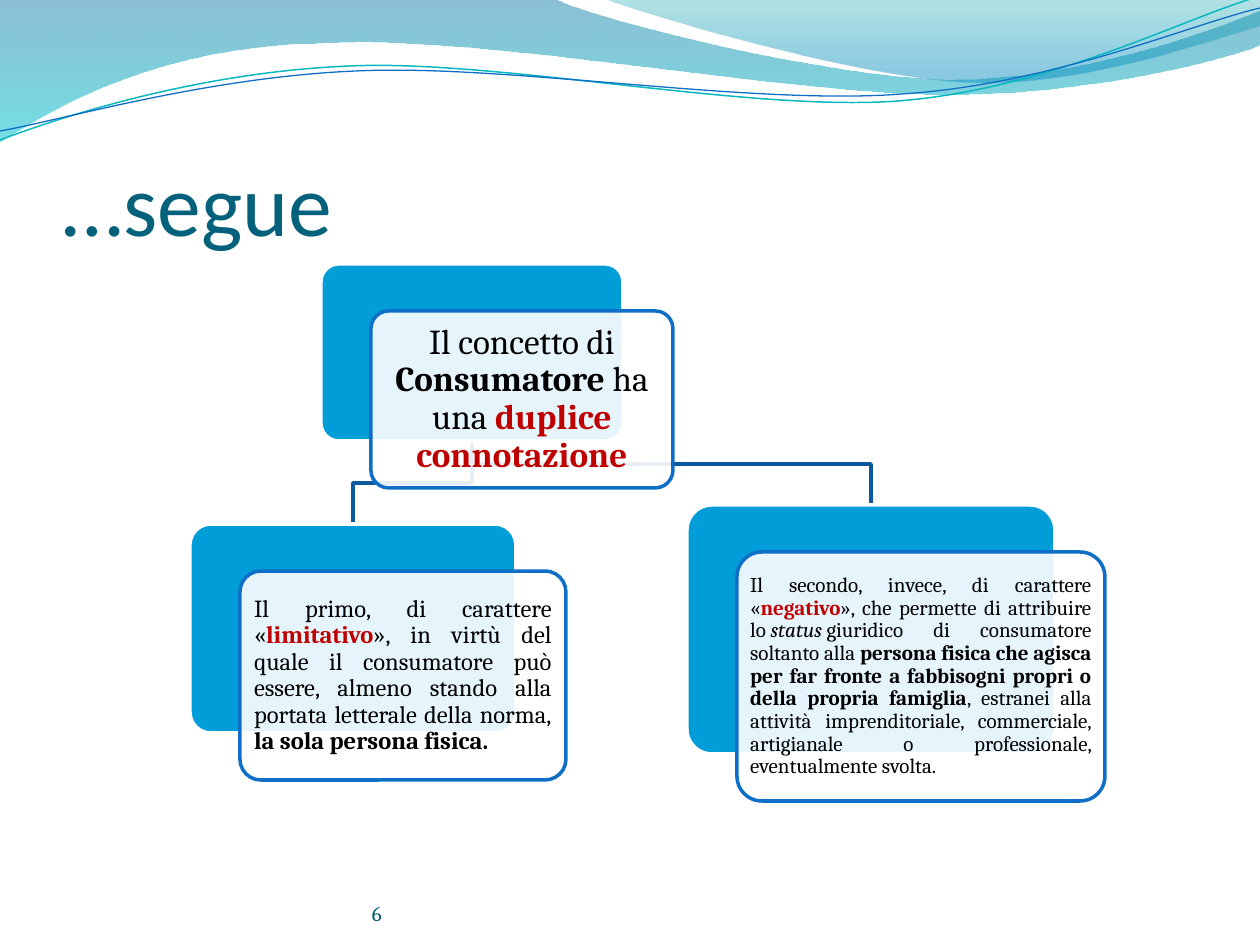
"""Build the slide on the double meaning of the consumer concept."""
import pptx
import pptx.dml.color
import pptx.enum.shapes
import pptx.enum.text
import pptx.oxml.ns
import pptx.util
from lxml import etree

PX = 914400 / 126
HUES = {
    "title": "04617B", "page": "045D75", "text": "000000", "red": "C00000",
    "card": "009DD9", "white": "FFFFFF", "edge": "0F6FC6", "link": "0C599F",
    "teal": "0AB8BF", "deep": "0074A1", "aqua": "00C6CF", "sea": "00A1A9",
    "sky": "008BBF",
}
RGB = {k: pptx.dml.color.RGBColor.from_string(v) for k, v in HUES.items()}
ALIGN = pptx.enum.text.PP_ALIGN
ANCHOR = pptx.enum.text.MSO_ANCHOR
NBSP = chr(160)
qn = pptx.oxml.ns.qn

deck = pptx.Presentation()
deck.slide_width = round(1260 * PX)
deck.slide_height = round(945 * PX)
shapes = deck.slides.add_slide(deck.slide_layouts[6]).shapes


def put(shape, runs, size=12, font="Cambria", hue="text", align=ALIGN.LEFT,
        anchor=ANCHOR.BOTTOM, pads=(0, 0, 0, 0), gap=1.0):
    frame = shape.text_frame
    frame.word_wrap = True
    frame.vertical_anchor = anchor
    (frame.margin_left, frame.margin_top, frame.margin_right,
     frame.margin_bottom) = [round(p * PX) for p in pads]
    para = frame.paragraphs[0]
    para.alignment = align
    para.line_spacing = gap
    for words, style in runs:
        run = para.add_run()
        run.text = words
        run.font.size = pptx.util.Pt(size)
        run.font.name = font
        run.font.bold = "b" in style
        run.font.italic = "i" in style
        run.font.color.rgb = RGB["red" if "r" in style else hue]


def trace(start, steps, close=False):
    dots = [step[i:i + 2] for step in steps for i in range(0, len(step), 2)]
    pen = shapes.build_freeform(*start, scale=PX)
    pen.add_line_segments(dots, close=close)
    shape = pen.convert_to_shape()
    shape.shadow.inherit = False
    legs = iter(list(shape.element.spPr.iter(qn("a:lnTo"))))
    for step in steps:
        leg = next(legs)
        if len(step) == 6:
            curve = etree.Element(qn("a:cubicBezTo"))
            leg.addprevious(curve)
            for part in (leg, next(legs), next(legs)):
                curve.append(part[0])
                part.getparent().remove(part)
    return shape


waves = [
    ((0, 0), [(554, -1), (600, 21, 837, 79, 955, 79), (1075, 79, 1207, 33, 1260, 11),
              (1261, 45), (1239, 55, 1096, 96, 940, 94), (784, 94, 481, 35, 324, 43),
              (163, 45, 58, 105, -1, 142), (0, 0)],
     [("deep", 0, 45), ("aqua", 1, 55)]),
    ((604, -1), [(641, 14, 859, 78, 969, 82), (1079, 87, 1211, 40, 1260, 26),
                 (1260, 0), (604, -1)],
     [("sea", 0, 30), ("sky", 0.8, 45)]),
]
for start, steps, stops in waves:
    wave = trace(start, steps, close=True)
    wave.line.fill.background()
    wave.fill.gradient()
    wave.fill.gradient_angle = 270
    for stop, (hue, place, _) in zip(wave.fill.gradient_stops, stops):
        stop.color.rgb = RGB[hue]
        stop.position = place
    tints = wave.element.spPr.iter(qn("a:srgbClr"))
    for tint, (_, _, alpha) in zip(tints, stops):
        etree.SubElement(tint, qn("a:alpha"), val=str(alpha * 1000))

cards = [
    (321, 264, 302, 177, 20, 10, ALIGN.CENTER, [
        ("Il concetto di ", ""), ("Consumatore", "b"), (" ha una ", ""),
        ("duplice connotazione", "br")]),
    (190, 524, 326, 209, 14, 8, ALIGN.JUSTIFY, [
        ("Il primo, di carattere «", ""), ("limitativo", "br"),
        ("», in virtù del quale il consumatore può essere, almeno stando alla "
         "portata letterale della norma,", ""),
        (" la sola persona fisica.", "b")]),
    (687, 505, 368, 249, 12, 6, ALIGN.JUSTIFY, [
        ("Il secondo, invece, di carattere «", ""), ("negativo", "br"),
        ("», che permette di attribuire lo" + NBSP, ""), ("status", "i"),
        (NBSP + "giuridico di consumatore soltanto alla ", ""),
        ("persona fisica che agisca per far fronte a fabbisogni propri o "
         "della propria famiglia", "b"),
        (", estranei alla attività imprenditoriale, commerciale, artigianale o "
         "professionale, eventualmente svolta.", "")]),
]
lines = [
    ((0, 140), [(60, 117, 199, 72, 349, 66), (497, 59, 747, 112, 898, 101),
                (1050, 89, 1182, 19, 1257, -3)], "teal", 0.85),
    ((0, 131), [(59, 121, 207, 77, 357, 71), (508, 64, 752, 106, 903, 94),
                (1053, 84, 1186, 26, 1260, 8)], "edge", 0.75),
]
left, top, wide, high = cards[0][:4]
root = (left + wide // 2, top + high)
for left, top, wide, *_ in cards[:0:-1]:
    mid, bend = left + wide // 2, top - 41
    lines.append((root, [(root[0], bend), (mid, bend), (mid, top)], "link", 2))
for start, steps, hue, width in lines:
    line = trace(start, steps)
    line.fill.background()
    line.line.color.rgb = RGB[hue]
    line.line.width = pptx.util.Pt(width)

title = shapes.add_textbox(*[round(v * PX) for v in (63, 97, 1134, 157)])
put(title, [("…segue", "")], size=50, font="Calibri", hue="title", pads=(0, 6, 0, 0))

for left, top, wide, high, size, pad, align, runs in cards:
    for dx, dy, fill, edge in ((0, 0, "card", "white"), (50, 47, "white", "edge")):
        box = [round(v * PX) for v in (left + dx, top + dy, wide, high)]
        card = shapes.add_shape(pptx.enum.shapes.MSO_SHAPE.ROUNDED_RECTANGLE, *box)
        card.adjustments[0] = 0.1
        card.shadow.inherit = False
        card.fill.solid()
        card.fill.fore_color.rgb = RGB[fill]
        card.line.color.rgb = RGB[edge]
        card.line.width = pptx.util.Pt(2)
    tint = card.element.spPr.find(qn("a:solidFill")).find(qn("a:srgbClr"))
    etree.SubElement(tint, qn("a:alpha"), val="90000")
    put(card, runs, size=size, align=align, anchor=ANCHOR.MIDDLE, pads=(pad,) * 4, gap=0.9)

page = shapes.add_textbox(*[round(v * PX) for v in (368, 876, 462, 50)])
put(page, [("6", "")], hue="page", pads=(4, 0, 0, 0))

deck.save("out.pptx")
